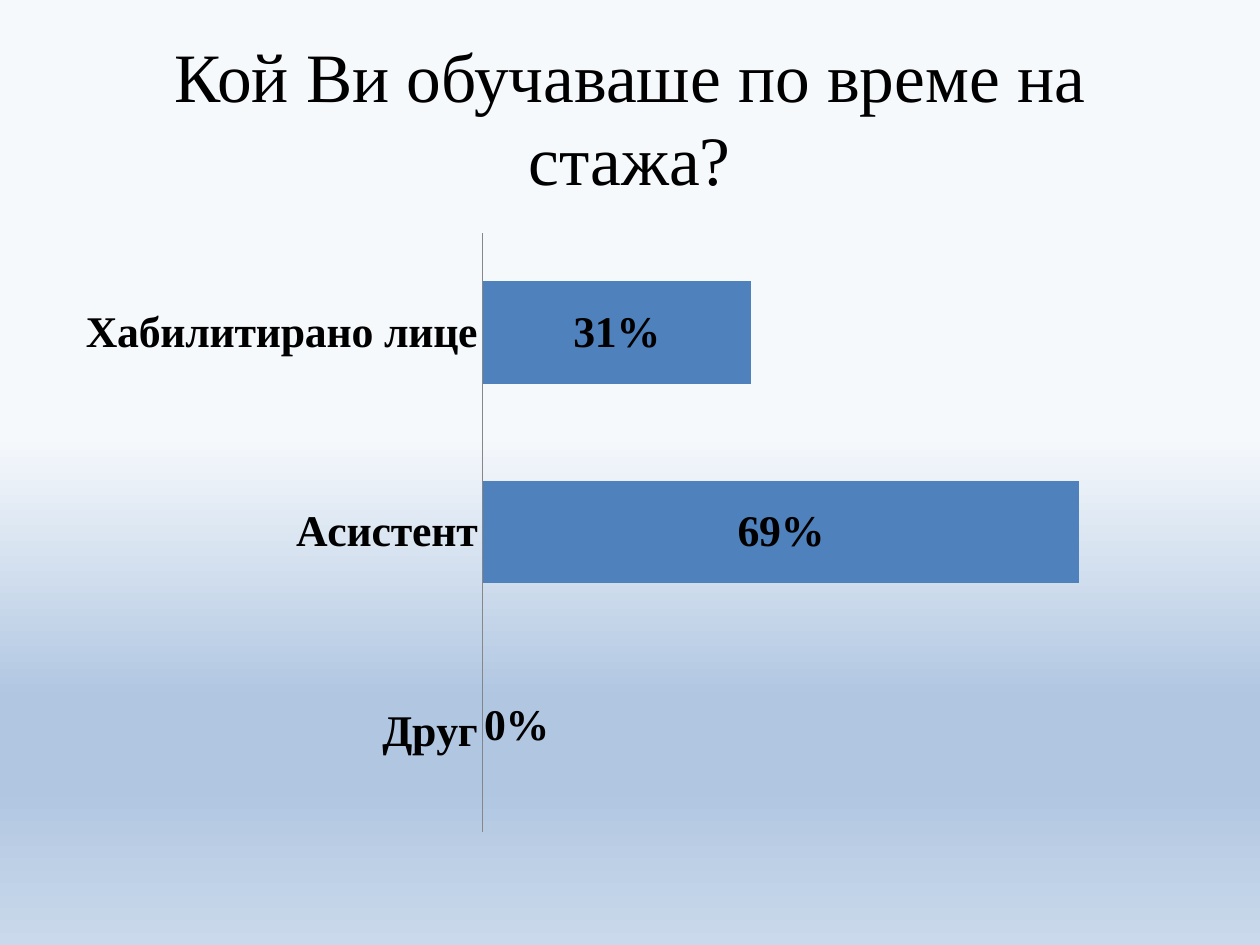
import pptx
import pptx.chart.data
import pptx.dml.color
import pptx.enum.chart
import pptx.enum.text
import pptx.oxml
import pptx.oxml.ns
import pptx.util
from pptx.util import Inches

BLACK = pptx.dml.color.RGBColor(0x00, 0x00, 0x00)
BAR_BLUE = pptx.dml.color.RGBColor(0x4F, 0x81, 0xBD)
AXIS_GREY = pptx.dml.color.RGBColor(0x87, 0x87, 0x87)
SKY_STOPS = [(46, "F6F9FC"), (74, "B0C6E1"), (83, "B0C6E1"), (100, "CAD9EB")]

SERIF = "Times New Roman"
TITLE_FONT = {"name": SERIF, "size": pptx.util.Pt(39.6)}
LABEL_FONT = {"name": SERIF, "size": pptx.util.Pt(25), "bold": True}
CHART_FONT = {"name": "Calibri", "size": pptx.util.Pt(18)}

ANSWERS = {"Друг": 0, "Асистент": 0.69, "Хабилитирано лице": 0.31}


def set_values(target, values):
    for name, value in values.items():
        setattr(target, name, value)


def set_font(font, values):
    set_values(font, values)
    font.color.rgb = BLACK


def chart_xml(xml):
    return pptx.oxml.parse_xml(xml.replace("/>", f' {pptx.oxml.ns.nsdecls("c")}/>', 1)
                               if xml.endswith("/>") else
                               xml.replace(">", f' {pptx.oxml.ns.nsdecls("c")}>', 1))


def manual_layout(**settings):
    parts = "".join(f'<c:{key} val="{value}"/>' for key, value in settings.items())
    return chart_xml(f"<c:layout><c:manualLayout>{parts}</c:manualLayout></c:layout>")


def paint_background(slide):
    fill = slide.background.fill
    fill.gradient()
    fill.gradient_angle = 270  # counter-clockwise, so the stops run downwards
    stops = slide.element.find(".//" + pptx.oxml.ns.qn("a:gsLst"))
    for stop in list(stops):
        stops.remove(stop)
    for position, colour in SKY_STOPS:
        stops.append(pptx.oxml.parse_xml(
            f'<a:gs {pptx.oxml.ns.nsdecls("a")} pos="{position * 1000}">'
            f'<a:srgbClr val="{colour}"/></a:gs>'))


def add_question(slide, left, top, width, height):
    question = slide.shapes.add_textbox(left, top, width, height).text_frame
    set_values(question, {"word_wrap": True,
                          "vertical_anchor": pptx.enum.text.MSO_ANCHOR.MIDDLE})
    paragraph = question.paragraphs[0]
    paragraph.alignment = pptx.enum.text.PP_ALIGN.CENTER
    run = paragraph.add_run()
    run.text = "Кой Ви обучаваше по време на стажа?"
    set_font(run.font, TITLE_FONT)


def add_answers(slide, left, top, width, height):
    data = pptx.chart.data.CategoryChartData(number_format="0%")
    data.categories = list(ANSWERS)
    data.add_series("Series 1", list(ANSWERS.values()))
    chart = slide.shapes.add_chart(pptx.enum.chart.XL_CHART_TYPE.BAR_STACKED,
                                   left, top, width, height, data).chart
    set_values(chart, {"has_legend": False, "has_title": False})
    set_font(chart.font, CHART_FONT)

    # Axes
    no_tick = pptx.enum.chart.XL_TICK_MARK.NONE
    answer_axis = chart.category_axis
    set_values(answer_axis, {"major_tick_mark": no_tick, "minor_tick_mark": no_tick,
                             "has_major_gridlines": False})
    set_font(answer_axis.tick_labels.font, LABEL_FONT)
    answer_axis.format.line.color.rgb = AXIS_GREY
    set_values(chart.value_axis, {"minimum_scale": 0, "maximum_scale": 0.8,
                                  "has_major_gridlines": False, "visible": False})

    # Bars and their labels
    plot = chart.plots[0]
    set_values(plot, {"gap_width": 95, "overlap": 100, "vary_by_categories": False})
    shares = plot.series[0]
    shares.format.fill.solid()
    shares.format.fill.fore_color.rgb = BAR_BLUE
    set_values(shares.data_labels, {"show_value": True, "number_format": "0%",
                                    "number_format_is_linked": False})
    set_font(shares.data_labels.font, LABEL_FONT)

    # The zero label stands beside the axis line
    set_font(shares.points[0].data_label.font, LABEL_FONT)
    zero_label = chart.element.find(".//" + pptx.oxml.ns.qn("c:dLbl"))
    zero_label.insert(1, manual_layout(x=0.03, y=-0.01))
    zero_label.insert(2, chart_xml('<c:numFmt formatCode="0%" sourceLinked="0"/>'))

    # Plot area within the chart
    plot_area = chart.element.find(".//" + pptx.oxml.ns.qn("c:plotArea"))
    for layout in plot_area.findall(pptx.oxml.ns.qn("c:layout")):
        plot_area.remove(layout)
    plot_area.insert(0, manual_layout(layoutTarget="inner", xMode="edge", yMode="edge",
                                      x=0.37, y=0.02, w=0.61, h=0.96))


def main():
    deck = pptx.Presentation()
    set_values(deck, {"slide_width": Inches(10), "slide_height": Inches(7.5)})
    slide = deck.slides.add_slide(deck.slide_layouts[6])
    paint_background(slide)
    add_question(slide, Inches(0.5), Inches(0.3), Inches(9), Inches(1.25))
    add_answers(slide, Inches(0.5), Inches(1.75), Inches(9), Inches(4.95))
    deck.save("out.pptx")


if __name__ == "__main__":
    main()
